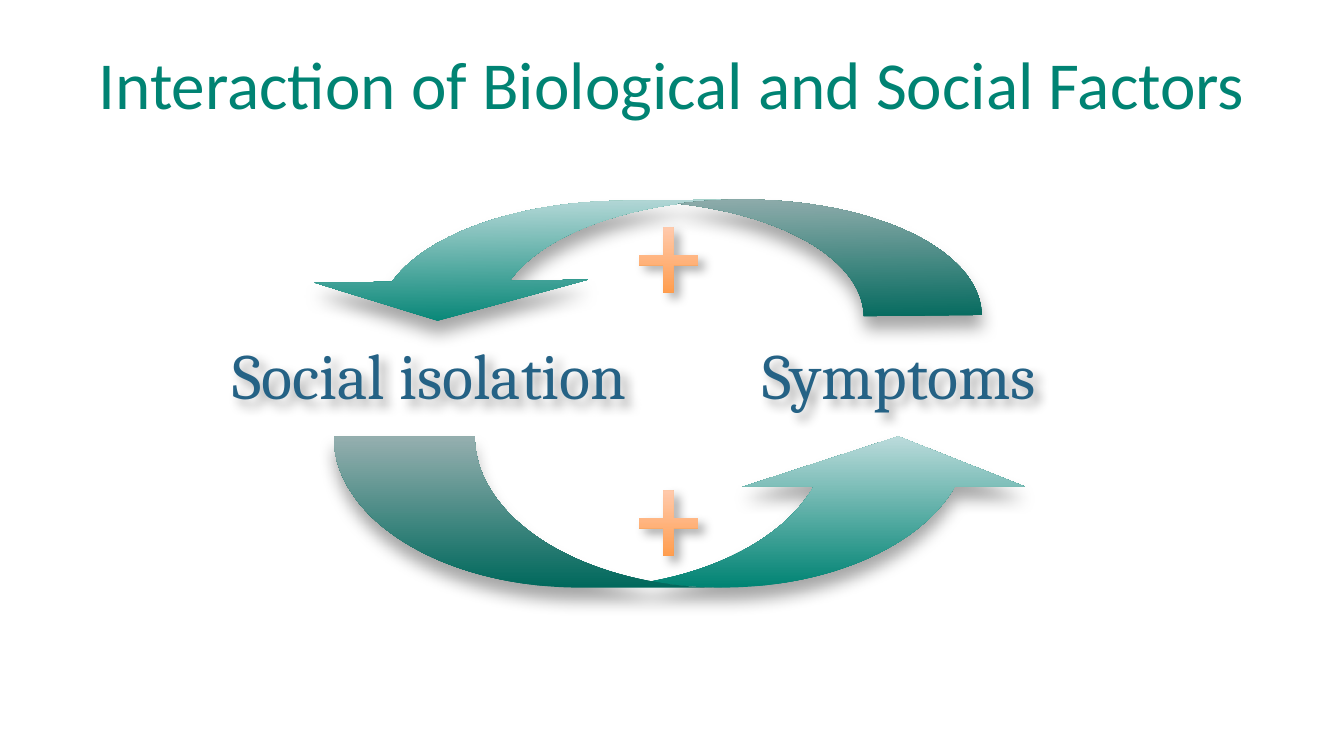
"""Build a slide showing how social isolation and symptoms reinforce each other."""
from lxml import etree
from pptx import Presentation
from pptx import util as u
from pptx.dml.color import RGBColor
from pptx.enum import shapes, text
from pptx.oxml import ns

COLORS = {
    "title": "008373", "label": "256285", "shadow": "000000",
    "arrow": ("008373", "BBDBDB"), "plus": ("FF953E", "FFD2BD"),
}
WIDTH, HEIGHT = u.Inches(13.33), u.Inches(7.5)
SOFT = {"blur": 11.8, "distance": 9, "angle": 90}
SLANTED = {"blur": 7.5, "distance": 6, "angle": 45}

# Places are left, top, width and height in percent of the slide.
TITLE = ("Interaction of Biological and Social Factors", (5, 4, 90, 16.67))
LABEL_TOP, LABEL_HEIGHT = 43.73, 11.73
LABELS = [("Social isolation", 16.2, 31.51), ("Symptoms", 55.81, 22.21)]
ARROWS = [
    {"kind": shapes.MSO_SHAPE.CURVED_UP_ARROW, "place": (24.83, 57.73, 52.51, 20),
     "adjust": (0.933, 1.867, 0.333)},
    {"kind": shapes.MSO_SHAPE.CURVED_DOWN_ARROW, "place": (22.36, 26.53, 50.64, 15.6),
     "adjust": (1.157, 2.314, 0.333), "rotation": 359.4, "flip": True},
]
PLUS_TOPS = (28.53, 63.33)
PLUS_LEFT, PLUS_WIDTH, PLUS_HEIGHT = 46.74, 6, 11.73


def locate(place):
    return [round(share * side / 100) for share, side in zip(place, (WIDTH, HEIGHT) * 2)]


def add_shadow(item, blur, distance, angle):
    item.shadow.inherit = False
    effects = item._element.spPr.find(ns.qn("a:effectLst"))
    outer = etree.SubElement(
        effects, ns.qn("a:outerShdw"), blurRad=str(u.Pt(blur)), dist=str(u.Pt(distance)),
        dir=str(angle * 60000), algn="ctr", rotWithShape="0")
    color = etree.SubElement(outer, ns.qn("a:srgbClr"), val=COLORS["shadow"])
    etree.SubElement(color, ns.qn("a:alpha"), val="35000")


def add_figure(page, kind, place, adjust, colors, shadow, rotation=0, flip=False):
    figure = page.shapes.add_shape(kind, *locate(place))
    for index, value in enumerate(adjust):
        figure.adjustments[index] = value
    figure.rotation = rotation
    if flip:
        figure._element.spPr.get_or_add_xfrm().set("flipH", "1")
    figure.fill.gradient()
    figure.fill.gradient_angle = 90
    for stop, color in zip(figure.fill.gradient_stops, colors):
        stop.color.rgb = RGBColor.from_string(color)
    figure.line.fill.background()
    add_shadow(figure, **shadow)


def add_text(page, words, place, font, size, color, wrap=False, spacing=None, inset=0.1):
    box = page.shapes.add_textbox(*locate(place))
    frame = box.text_frame
    frame.word_wrap = wrap
    frame.vertical_anchor = text.MSO_ANCHOR.MIDDLE if wrap else text.MSO_ANCHOR.TOP
    frame.auto_size = text.MSO_AUTO_SIZE.NONE if wrap else text.MSO_AUTO_SIZE.SHAPE_TO_FIT_TEXT
    frame.margin_left = frame.margin_right = u.Inches(inset)
    para = frame.paragraphs[0]
    para.alignment = text.PP_ALIGN.CENTER
    para.line_spacing = spacing
    span = para.add_run()
    span.text = words
    span.font.name, span.font.size = font, u.Pt(size)
    span.font.color.rgb = RGBColor.from_string(color)
    return box


def main():
    deck = Presentation()
    deck.slide_width, deck.slide_height = WIDTH, HEIGHT
    page = deck.slides.add_slide(deck.slide_layouts[6])
    add_text(page, *TITLE, font="Calibri", size=48, color=COLORS["title"],
             wrap=True, spacing=u.Pt(42), inset=0)
    for arrow in ARROWS:
        add_figure(page, colors=COLORS["arrow"], shadow=SOFT, **arrow)
    for words, left, width in LABELS:
        label = add_text(page, words, (left, LABEL_TOP, width, LABEL_HEIGHT),
                         font="Cambria", size=46, color=COLORS["label"])
        add_shadow(label, **SLANTED)
    for top in PLUS_TOPS:
        add_figure(page, shapes.MSO_SHAPE.MATH_PLUS, (PLUS_LEFT, top, PLUS_WIDTH, PLUS_HEIGHT),
                   (0.124,), COLORS["plus"], SLANTED)
    deck.save("out.pptx")


if __name__ == "__main__":
    main()
